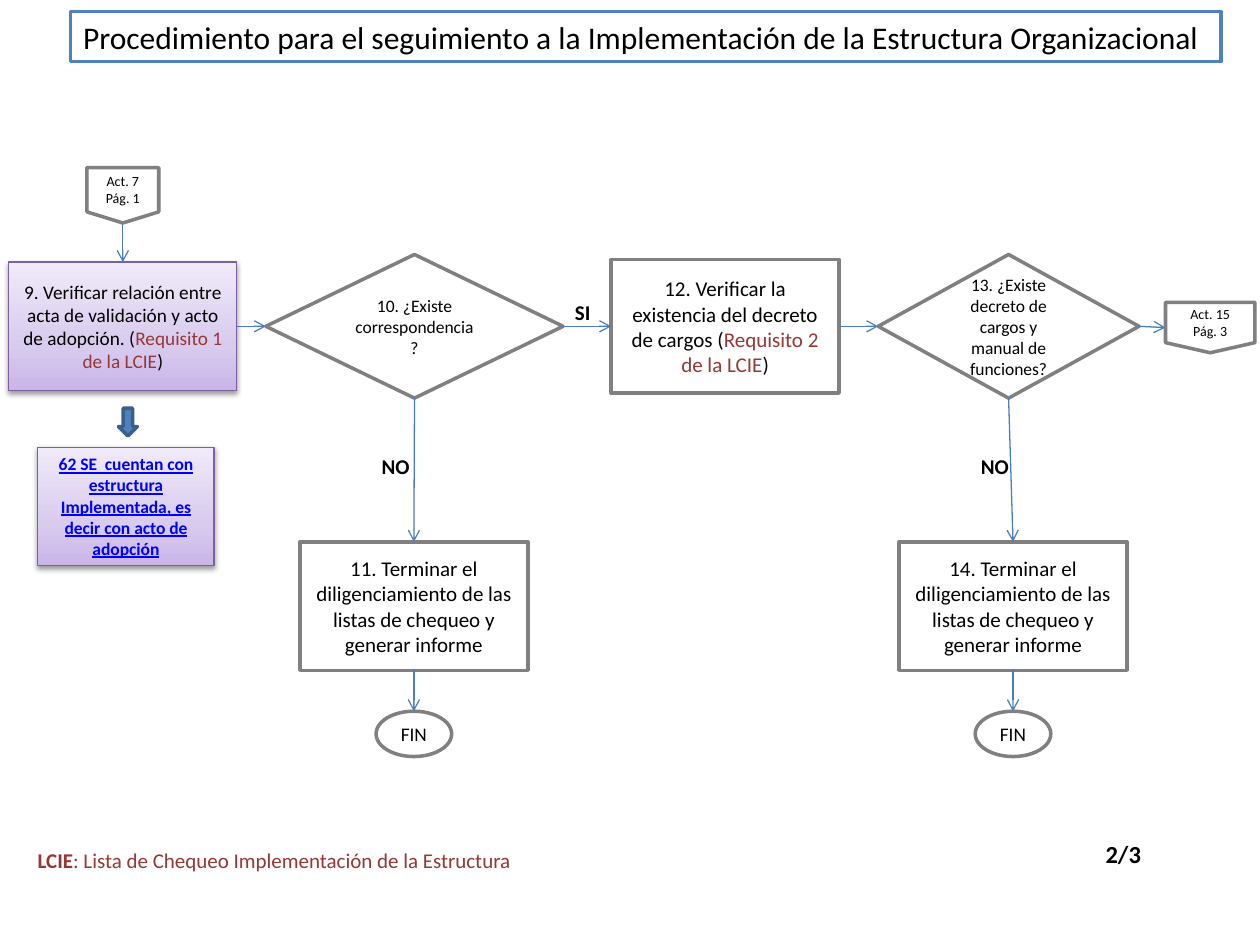
from copy import deepcopy

from lxml import etree
from pptx import Presentation
from pptx import util as u
from pptx.dml import color as dml
from pptx.enum import shapes, text
from pptx.oxml import ns

GRID = u.Inches(0.1)
FORM = shapes.MSO_SHAPE
ALIGN = text.PP_ALIGN
ANCHOR = text.MSO_ANCHOR
TOP, LEFT, BOTTOM, RIGHT = range(4)
BLACK, GREY, WHITE, BRICK = "000000", "808080", "FFFFFF", "953735"
LILAC = [(0, "C9B5E8"), (0.35, "D8CBEE"), (1, "F0EAF9")]
FINISH = "Terminar el diligenciamiento de las listas de chequeo y generar informe"


def rgb(value):
    """Turn a hex string into a colour."""
    return dml.RGBColor.from_string(value)


def cells(box):
    """Turn columns and rows of the grid into lengths."""
    return [round(part * GRID) for part in box]


def write(shape, paragraphs, size, align=ALIGN.CENTER, anchor=ANCHOR.MIDDLE, margin=None):
    """Write paragraphs, each a list of (words, colour, bold, underline) runs."""
    frame = shape.text_frame
    frame.word_wrap = True
    frame.auto_size = text.MSO_AUTO_SIZE.NONE
    frame.vertical_anchor = anchor
    if margin is not None:
        frame.margin_left = frame.margin_right = margin
        frame.margin_top = frame.margin_bottom = margin
    for index, runs in enumerate(paragraphs):
        paragraph = frame.add_paragraph() if index else frame.paragraphs[0]
        paragraph.alignment = align
        for words, colour, bold, underline in runs:
            run = paragraph.add_run()
            run.text = words
            run.font.name = "Calibri"
            run.font.size = u.Pt(size)
            run.font.color.rgb = rgb(colour)
            run.font.bold = bold
            run.font.underline = underline


def plain(words, colour=BLACK, bold=False, underline=False):
    """Describe one run."""
    return words, colour, bold, underline


def node(slide, form, box, line=GREY, width=2, fill=None):
    """Draw one flowchart shape in a grid box."""
    shape = slide.shapes.add_shape(form, *cells(box))
    shape.shadow.inherit = False
    shape.line.color.rgb = rgb(line)
    shape.line.width = u.Pt(width)
    if fill:
        shape.fill.solid()
        shape.fill.fore_color.rgb = rgb(fill)
    else:
        shape.fill.background()
    return shape


def lilac_node(slide, box):
    """Draw a rectangle with the lilac gradient and a soft shadow."""
    shape = node(slide, FORM.RECTANGLE, box, "7D60A0", 0.75)
    shape.fill.gradient()
    shape.fill.gradient_angle = 90
    properties = shape._element.spPr
    stops = properties.find(".//" + ns.qn("a:gsLst"))
    stops.append(deepcopy(stops[0]))
    for stop, (position, colour) in zip(shape.fill.gradient_stops, LILAC):
        stop.position = position
        stop.color.rgb = rgb(colour)
    shadow = etree.SubElement(
        properties.find(ns.qn("a:effectLst")), ns.qn("a:outerShdw"),
        blurRad=str(u.Pt(3.1)), dist=str(u.Pt(1.6)), dir="5400000", rotWithShape="0")
    tint = etree.SubElement(shadow, ns.qn("a:srgbClr"), val=BLACK)
    etree.SubElement(tint, ns.qn("a:alpha"), val="38000")
    return shape


def arrow(slide, start, start_side, end, end_side):
    """Join two shapes with an arrow."""
    link = slide.shapes.add_connector(shapes.MSO_CONNECTOR.STRAIGHT, 0, 0, 0, 0)
    link.begin_connect(start, start_side)
    link.end_connect(end, end_side)
    link.line.color.rgb = rgb("4B7EBC")
    link.line.width = u.Pt(0.75)
    etree.SubElement(link.line._get_or_add_ln(), ns.qn("a:tailEnd"), type="arrow")
    etree.SubElement(link._element.spPr, ns.qn("a:effectLst"))


def label(slide, box, runs, size=12, align=ALIGN.CENTER):
    """Place free text in a grid box."""
    write(slide.shapes.add_textbox(*cells(box)), [runs], size, align, ANCHOR.TOP)


def page_link(slide, box, activity, page):
    """Place an off-page connector naming an activity and its page."""
    shape = node(slide, FORM.FLOWCHART_OFFPAGE_CONNECTOR, box, fill=WHITE)
    write(shape, [[plain(activity)], [plain(page)]], 8, margin=0)
    return shape


def heading(slide, box):
    """Place the framed title."""
    title = slide.shapes.title
    title.left, title.top, title.width, title.height = cells(box)
    title.fill.solid()
    title.fill.fore_color.rgb = rgb(WHITE)
    title.line.color.rgb = rgb("4F81BD")
    title.line.width = u.Pt(2)
    words = "Procedimiento para el seguimiento a la Implementación de la Estructura Organizacional"
    write(title, [[plain(words)]], 18, ALIGN.LEFT, ANCHOR.TOP)


def entry(slide, box):
    """Place the first activity with its entry above and its result below."""
    left, top, width, height = box
    activity = lilac_node(slide, box)
    write(activity, [[
        plain("9. Verificar relación entre acta de validación y acto de adopción. ("),
        plain("Requisito 1 de la LCIE", BRICK), plain(")")]], 11)
    source = page_link(slide, (left + width / 2 - 2.85, top - 7.5, 5.7, 4.4), "Act. 7", "Pág. 1")
    arrow(slide, source, BOTTOM, activity, TOP)
    below = top + height
    node(slide, FORM.DOWN_ARROW, (left + 8.7, below + 1.4, 1.5, 2.2), "3A5F8C", fill="4F81BD")
    result = lilac_node(slide, (left + 2.3, below + 4.5, 14, 9.4))
    words = "62 SE  cuentan con estructura Implementada, es decir con acto de adopción"
    write(result, [[plain(words, "0000FF", True, True)]], 10, anchor=ANCHOR.TOP)
    return activity


def branch(slide, box, axis, question, closing):
    """Place a decision and, below it on the axis, its NO outcome."""
    left, top, width, height = box
    decision = node(slide, FORM.FLOWCHART_DECISION, box)
    write(decision, [[plain(question)]], 10)
    below = top + height
    step = node(slide, FORM.RECTANGLE, (axis - 9.05, below + 11.4, 18.1, 10.2))
    write(step, [[plain(closing)]], 12)
    end = node(slide, FORM.OVAL, (axis - 3, below + 24.85, 6, 3.6))
    write(end, [[plain("FIN")]], 11, margin=0)
    arrow(slide, decision, BOTTOM, step, TOP)
    arrow(slide, step, BOTTOM, end, TOP)
    label(slide, (axis - 4.45, below + 3.9, 5.1, 3), [plain("NO", bold=True)], align=ALIGN.RIGHT)
    return decision


def verification(slide, box):
    """Place the activity that follows a positive first decision."""
    activity = node(slide, FORM.RECTANGLE, box)
    write(activity, [[
        plain("12. Verificar la existencia del decreto de cargos ("),
        plain("Requisito 2 de la LCIE", BRICK), plain(")")]], 12)
    label(slide, (box[0] - 4.6, box[1] + 2.7, 4.7, 3), [plain("SI", bold=True)])
    return activity


def footer(slide, box):
    """Place the abbreviation at the left and the page count at the right."""
    left, top, width, height = box
    label(slide, (left, top + 0.7, 42.8, 3),
          [plain("LCIE", BRICK, True),
           plain(": Lista de Chequeo Implementación de la Estructura", BRICK)], align=ALIGN.LEFT)
    label(slide, (left + width - 5.9, top, 5.9, height), [plain("2/3", bold=True)], 14)


def main():
    """Build the procedure slide."""
    deck = Presentation()
    deck.slide_width, deck.slide_height = 100 * GRID, 75 * GRID
    slide = deck.slides.add_slide(deck.slide_layouts[5])
    heading(slide, (5.6, 0.9, 91.3, 4))
    flow = [
        entry(slide, (0.7, 20.8, 18.1, 10.2)),
        branch(slide, (21.1, 20.2, 23.6, 11.4), 32.85,
               "10. ¿Existe correspondencia?", "11. " + FINISH),
        verification(slide, (48.5, 20.6, 18.1, 10.6)),
        branch(slide, (69.7, 20.2, 20.7, 11.4), 80.4,
               "13. ¿Existe decreto de cargos y manual de funciones?", "14. " + FINISH),
        page_link(slide, (92.5, 24, 7.1, 4), "Act. 15", "Pág. 3"),
    ]
    for before, after in zip(flow, flow[1:]):
        arrow(slide, before, RIGHT, after, LEFT)
    footer(slide, (2, 66.1, 90.1, 3.4))
    deck.save("out.pptx")


if __name__ == "__main__":
    main()
